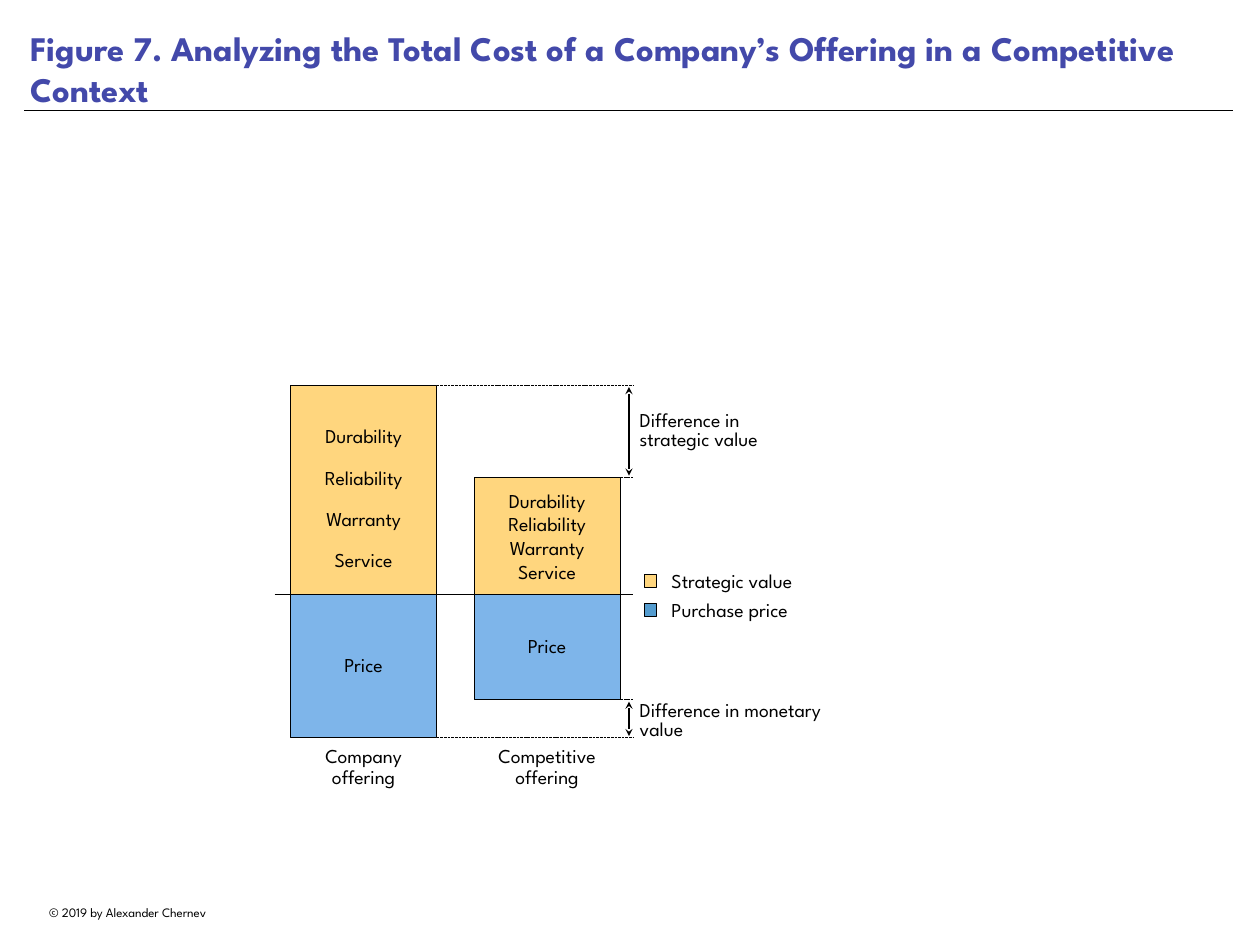
"""Build a slide comparing the total cost of a company's and a competitor's offering."""
from lxml.etree import SubElement
from pptx import Presentation
from pptx.dml.color import RGBColor
from pptx.enum.dml import MSO_LINE
from pptx.enum.shapes import MSO_CONNECTOR, MSO_SHAPE
from pptx.enum.text import MSO_ANCHOR as Anchor, MSO_AUTO_SIZE, PP_ALIGN as Align
from pptx.oxml.ns import qn
from pptx.util import Cm, Pt

TITLE = "Figure 7. Analyzing the Total Cost of a Company’s Offering in a Competitive Context"
COPYRIGHT = "© 2019 by Alexander Chernev"
FONT = "League Spartan"
COLORS = {"title": "4349AA", "strategic": "FFD67E", "price": "7EB5EA",
          "price key": "549CCF", "ink": "000000", "paper": "FFFFFF"}
BENEFITS = ["Durability", "Reliability", "Warranty", "Service"]
OFFERINGS = [
    {"name": "Company offering", "left": 8.33, "top": 11.05, "bottom": 21.16,
     "spacing": 1.7, "before": 1},
    {"name": "Competitive offering", "left": 13.59, "top": 13.69, "bottom": 20.07,
     "spacing": 1, "before": 0},
]
DIFFERENCES = [
    ("Difference in strategic value", "top", (18.19, 11.53, 5.18, 1.7)),
    ("Difference in monetary value", "bottom", (18.19, 19.84, 5.99, 1.68)),
]
LEGEND = [("Strategic value", "strategic"), ("Purchase price", "price key")]

BAR_WIDTH = 4.19
BASELINE = 17.04
CHART_RIGHT = 18.14
ARROW_X = 18.03
ARROW_GAP = 0.05
NAME_TOP, NAME_HEIGHT = 21.26, 1.8
LEGEND_LEFT, LEGEND_MIDDLE, LEGEND_STEP = 18.47, 16.66, 0.83
KEY_SIZE = 0.36


def color(name):
    return RGBColor.from_string(COLORS[name])


def write(shape, lines, size=16, ink="ink", bold=False, align=Align.LEFT,
          anchor=Anchor.MIDDLE, inset=0.15, spacing=1, before=0, wrap=True):
    frame = shape.text_frame
    frame.auto_size = MSO_AUTO_SIZE.NONE
    frame.word_wrap = wrap
    frame.vertical_anchor = anchor
    frame.margin_left = frame.margin_right = Cm(inset)
    frame.margin_top = frame.margin_bottom = Cm(inset)
    for index, line in enumerate(lines):
        paragraph = frame.add_paragraph() if index else frame.paragraphs[0]
        paragraph.alignment = align
        paragraph.line_spacing = spacing
        paragraph.space_before = Pt(before)
        run = paragraph.add_run()
        run.text = line
        run.font.name = FONT
        run.font.size = Pt(size)
        run.font.bold = bold
        run.font.color.rgb = color(ink)


def add_box(slide, left, top, width, height, fill, outlined=True):
    shape = slide.shapes.add_shape(
        MSO_SHAPE.RECTANGLE, Cm(left), Cm(top), Cm(width), Cm(height))
    shape.shadow.inherit = False
    shape.fill.solid()
    shape.fill.fore_color.rgb = color(fill)
    if outlined:
        shape.line.color.rgb = color("ink")
        shape.line.width = Pt(0.75)
    else:
        shape.line.fill.background()
    return shape


def add_line(slide, x1, y1, x2, y2, width=0.75, dashed=False, arrows=False):
    connector = slide.shapes.add_connector(
        MSO_CONNECTOR.STRAIGHT, Cm(x1), Cm(y1), Cm(x2), Cm(y2))
    connector.line.color.rgb = color("ink")
    connector.line.width = Pt(width)
    if dashed:
        connector.line.dash_style = MSO_LINE.SQUARE_DOT
    if arrows:
        for end in ("a:headEnd", "a:tailEnd"):
            SubElement(connector.line._get_or_add_ln(), qn(end), type="stealth")
    SubElement(connector._element.spPr, qn("a:effectLst"))


def add_title(slide):
    title = slide.shapes.title
    title.left, title.top, title.width, title.height = Cm(0.69), Cm(0.03), Cm(34.65), Cm(3.3)
    write(title, [TITLE], size=28, ink="title", bold=True, anchor=Anchor.BOTTOM, inset=0.18)
    add_line(slide, 0.69, 3.15, 35.36, 3.15, width=0.5)


def add_offering(slide, offering):
    left, top, bottom = offering["left"], offering["top"], offering["bottom"]
    for edge in (top, bottom):
        add_line(slide, left + BAR_WIDTH, edge, CHART_RIGHT, edge, dashed=True)
    price = add_box(slide, left, BASELINE, BAR_WIDTH, bottom - BASELINE, "price")
    write(price, ["Price"], align=Align.CENTER, spacing=0.9, before=6)
    strategic = add_box(slide, left, top, BAR_WIDTH, BASELINE - top, "strategic")
    write(strategic, BENEFITS, align=Align.CENTER,
          spacing=offering["spacing"], before=offering["before"])
    name = add_box(slide, left, NAME_TOP, BAR_WIDTH, NAME_HEIGHT, "paper", outlined=False)
    write(name, [offering["name"]], align=Align.CENTER, anchor=Anchor.TOP, spacing=0.9)


def add_difference(slide, label, side, place):
    start, end = sorted(offering[side] for offering in OFFERINGS)
    add_line(slide, ARROW_X, start + ARROW_GAP, ARROW_X, end - ARROW_GAP, width=1, arrows=True)
    write(add_box(slide, *place, "paper", outlined=False), [label], spacing=0.8)


def add_legend(slide):
    for index, (label, fill) in enumerate(LEGEND):
        middle = LEGEND_MIDDLE + index * LEGEND_STEP
        add_box(slide, LEGEND_LEFT, middle - KEY_SIZE / 2, KEY_SIZE, KEY_SIZE, fill)
        text = slide.shapes.add_textbox(Cm(19.1), Cm(middle - 0.5), Cm(4.45), Cm(1))
        write(text, [label], wrap=False)


def main():
    presentation = Presentation()
    presentation.slide_width, presentation.slide_height = Cm(36.12), Cm(27.1)
    slide = presentation.slides.add_slide(presentation.slide_layouts[5])
    add_title(slide)
    add_line(slide, 7.87, BASELINE, CHART_RIGHT, BASELINE)
    for offering in OFFERINGS:
        add_offering(slide, offering)
    for difference in DIFFERENCES:
        add_difference(slide, *difference)
    add_legend(slide)
    footer = slide.shapes.add_textbox(Cm(0.69), Cm(25.81), Cm(5.94), Cm(0.71))
    write(footer, [COPYRIGHT], size=10.5, align=Align.CENTER, wrap=False)
    presentation.save("out.pptx")


if __name__ == "__main__":
    main()
